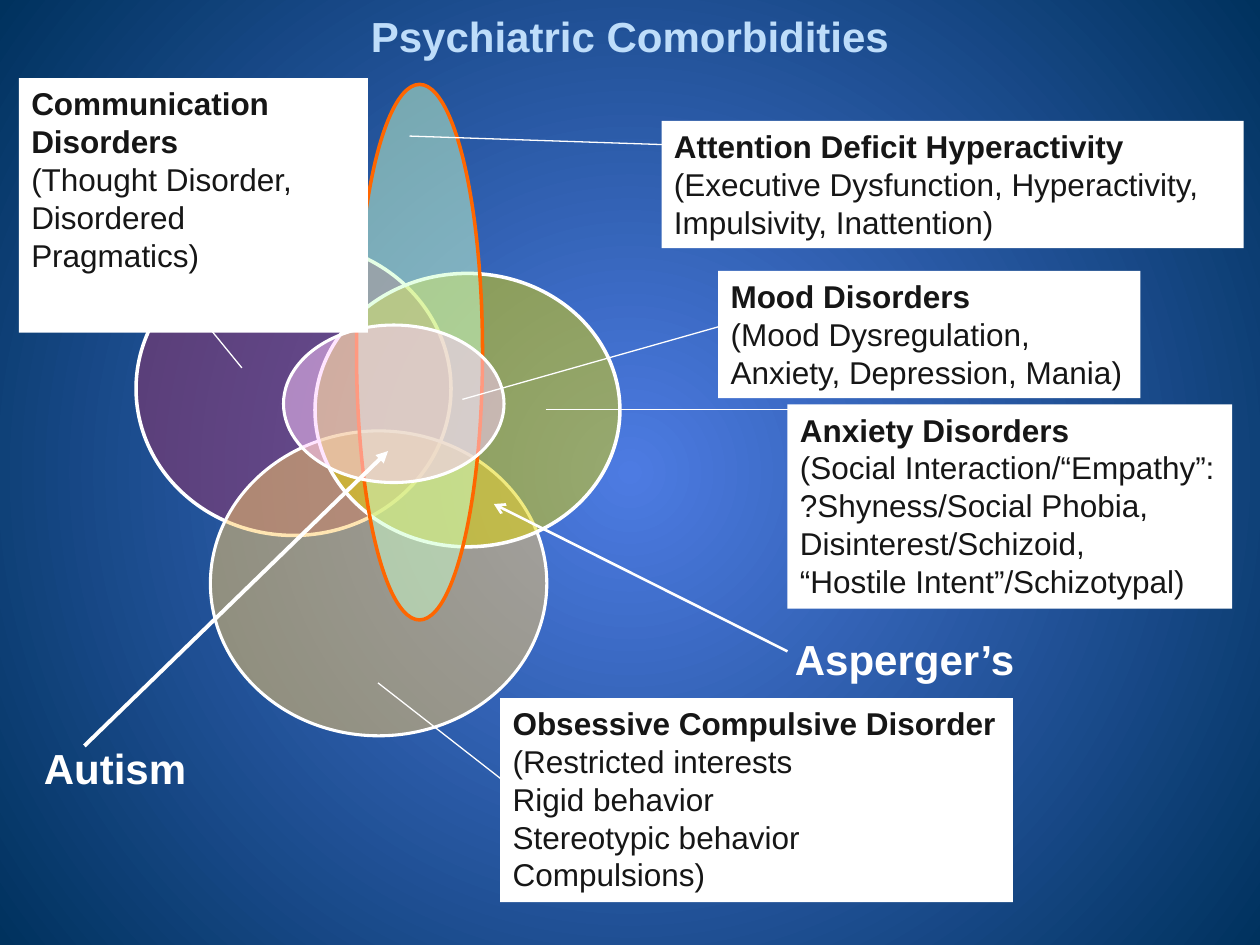
"""Build the psychiatric comorbidities overlap diagram slide."""
from lxml import etree
from pptx import Presentation
from pptx import util as u
from pptx.dml.color import RGBColor
from pptx.enum import shapes, text
from pptx.oxml.ns import qn

COLORS = {
    "center": "4D7BE2", "edge": "00325E", "white": "FFFFFF", "ink": "161616",
    "title": "BEDDFA", "orange": "FF6600", "plum": "993366", "amber": "FFCC66",
    "yellow": "E2D700", "mint": "CCFFCC", "pink": "FFCCFF",
}

ELLIPSES = [
    ((1.08, 1.92, 2.5, 2.33), "plum", "white", 2),
    ((1.67, 3.42, 2.67, 2.42), "amber", "white", 1.75),
    ((2.5, 2.17, 2.42, 2.17), "yellow", "white", 2),
    ((2.83, 0.67, 1, 4.25), "mint", "orange", 2),
    ((2.25, 2.58, 1.75, 1.25), "pink", "white", 1.75),
]

LINES = [
    ((3.25, 1.08), (5.92, 1.17), 0.75, None),
    ((4.33, 3.25), (6.67, 3.25), 0.75, None),
    ((3, 5.42), (4, 6.2), 0.75, None),
    ((1.92, 2.92), (1.17, 2), 0.75, None),
    ((3.67, 3.17), (5.75, 2.58), 0.75, None),
    ((6.25, 5.17), (3.92, 4), 1.5, "arrow"),
    ((0.67, 5.92), (3.08, 3.58), 2.25, "triangle"),
]

DISORDERS = [
    ((5.25, 0.96, 4.62, 1.01), True, [
        "Attention Deficit Hyperactivity",
        "(Executive Dysfunction, Hyperactivity, Impulsivity, Inattention)"]),
    ((6.25, 3.21, 3.53, 1.62), False, [
        "Anxiety Disorders", "(Social Interaction/“Empathy”:",
        "?Shyness/Social Phobia,", "Disinterest/Schizoid,",
        "“Hostile Intent”/Schizotypal)"]),
    ((3.97, 5.54, 4.07, 1.62), False, [
        "Obsessive Compulsive Disorder", "(Restricted interests",
        "Rigid behavior", "Stereotypic behavior", "Compulsions)"]),
    ((0.15, 0.62, 2.77, 2.02), True, [
        "Communication Disorders", "(Thought Disorder,",
        "Disordered Pragmatics)"]),
    ((5.7, 2.15, 3.35, 1.01), True, [
        "Mood Disorders", "(Mood Dysregulation, Anxiety, Depression, Mania)"]),
]

LABELS = [
    ((6.21, 4.98, 2.85, 0.51), "Asperger’s", "white"),
    ((0.25, 5.84, 1.34, 0.51), "Autism", "white"),
]
TITLE = ((0.5, 0.05, 9, 0.51), "Psychiatric Comorbidities", "title")


def rgb(name):
    return RGBColor.from_string(COLORS[name])


def inches(values):
    return [u.Inches(v) for v in values]


def set_background(s):
    fill = s.background.fill
    fill.gradient()
    for stop, name, pos in zip(fill.gradient_stops, ("center", "edge"), (0, 1)):
        stop.color.rgb = rgb(name)
        stop.position = pos
    grad = s.background._cSld.find(".//" + qn("a:gradFill"))
    grad.remove(grad.find(qn("a:lin")))
    path = etree.SubElement(grad, qn("a:path"), path="circle")
    etree.SubElement(path, qn("a:fillToRect"),
                     {side: "50000" for side in "ltrb"})


def add_ellipse(s, box, fill, line, width):
    sp = s.shapes.add_shape(shapes.MSO_SHAPE.OVAL, *inches(box))
    sp.shadow.inherit = False
    sp.fill.solid()
    sp.fill.fore_color.rgb = rgb(fill)
    color = sp._element.spPr.find(qn("a:solidFill"))[0]
    etree.SubElement(color, qn("a:alpha"), val="50000")
    sp.line.color.rgb = rgb(line)
    sp.line.width = u.Pt(width)


def add_line(s, start, end, width, arrow):
    cx = s.shapes.add_connector(shapes.MSO_CONNECTOR.STRAIGHT,
                                *inches(start + end))
    cx.line.color.rgb = rgb("white")
    cx.line.width = u.Pt(width)
    if arrow:
        etree.SubElement(cx.line._get_or_add_ln(), qn("a:tailEnd"), type=arrow)
    etree.SubElement(cx._element.spPr, qn("a:effectLst"))


def add_text(sp, lines, size, color, wrap=True):
    tf = sp.text_frame
    tf.text = "\n".join(lines)
    tf.word_wrap = wrap
    tf.vertical_anchor = text.MSO_ANCHOR.TOP
    for i, p in enumerate(tf.paragraphs):
        p.alignment = text.PP_ALIGN.LEFT
        font = p.runs[0].font
        font.name, font.size, font.bold = "Arial", u.Pt(size), i == 0
        font.color.rgb = rgb(color)
    return tf


def add_disorder(s, box, wrap, lines):
    sp = s.shapes.add_shape(shapes.MSO_SHAPE.RECTANGLE, *inches(box))
    sp.shadow.inherit = False
    sp.fill.solid()
    sp.fill.fore_color.rgb = rgb("white")
    sp.line.fill.background()
    add_text(sp, lines, 18, "ink", wrap)


def add_label(s, box, label, color):
    return add_text(s.shapes.add_textbox(*inches(box)), [label], 24, color)


def main():
    prs = Presentation()
    prs.slide_width, prs.slide_height = inches((10, 7.5))
    s = prs.slides.add_slide(prs.slide_layouts[6])
    set_background(s)
    for add, rows in ((add_ellipse, ELLIPSES), (add_line, LINES),
                      (add_disorder, DISORDERS), (add_label, LABELS)):
        for row in rows:
            add(s, *row)
    tf = add_label(s, *TITLE)
    tf.vertical_anchor = text.MSO_ANCHOR.MIDDLE
    p = tf.paragraphs[0]
    p.alignment = text.PP_ALIGN.CENTER
    p.line_spacing = 0.94
    prs.save("out.pptx")


if __name__ == "__main__":
    main()
